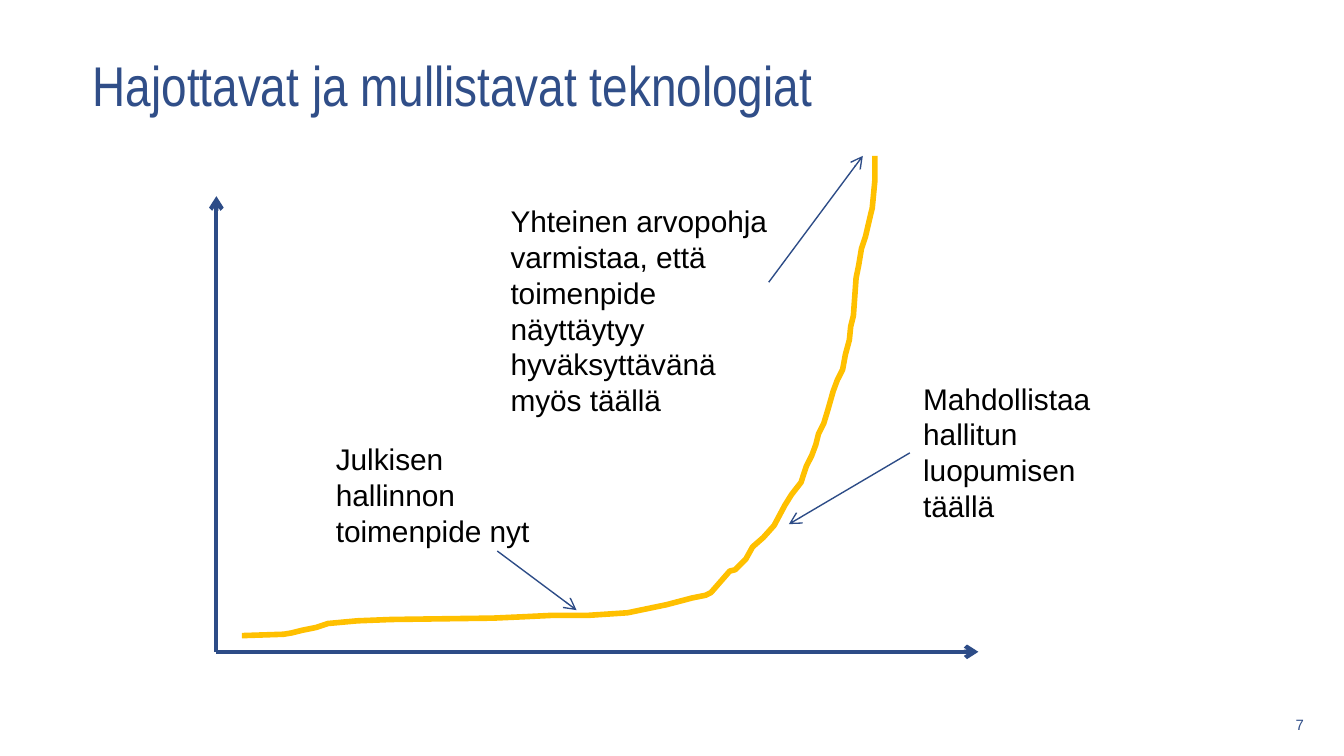
from pptx import Presentation
from pptx.dml.color import RGBColor
from pptx.enum.shapes import MSO_CONNECTOR
from pptx.enum.text import MSO_ANCHOR, PP_ALIGN
from pptx.oxml.ns import qn
from pptx.util import Pt
from lxml.etree import SubElement

PX = 9144  # EMU per px, 100 px to the inch
NAVY = RGBColor(0x2D, 0x4C, 0x87)
TITLE_BLUE = RGBColor(0x30, 0x4E, 0x88)
AMBER = RGBColor(0xFF, 0xC0, 0x00)
BLACK = RGBColor(0x00, 0x00, 0x00)

# Growth curve, relative to the graph box
GROWTH = [
    (19, 357), (50, 356), (56, 355), (64, 353), (74, 351), (83, 348),
    (105, 346), (130, 345), (206, 344), (228, 343), (249, 342), (276, 342),
    (306, 340), (335, 334), (354, 329), (364, 327), (368, 325), (375, 317),
    (382, 309), (386, 308), (394, 300), (399, 291), (407, 284), (415, 275),
    (423, 260), (428, 252), (435, 243), (439, 231), (443, 223), (446, 215),
    (448, 207), (452, 199), (455, 189), (459, 175), (462, 167), (466, 159),
    (468, 148), (471, 137), (472, 127), (474, 119), (476, 91), (478, 81),
    (480, 69), (483, 60), (487, 43), (488, 39), (490, 18), (490, 0),
]

# Text, its box, and its arrow's start and end, relative to the graph box
NOTES = [
    ("Julkisen hallinnon toimenpide nyt",
     (79, 207, 181, 91), (209, 294), (268, 338)),
    ("Mahdollistaa hallitun luopumisen täällä",
     (516, 162, 181, 118), (516, 221), (426, 274)),
    ("Yhteinen arvopohja varmistaa, että toimenpide näyttäytyy "
     "hyväksyttävänä myös täällä",
     (209, 30, 211, 172), (411, 94), (481, 0)),
]


def write_text(shape, text, size, color, font="Arial", align=PP_ALIGN.LEFT,
               anchor=MSO_ANCHOR.TOP):
    frame = shape.text_frame
    frame.word_wrap = True
    frame.vertical_anchor = anchor
    paragraph = frame.paragraphs[0]
    paragraph.alignment = align
    run = paragraph.add_run()
    run.text = text
    run.font.name = font
    run.font.size = Pt(size)
    run.font.color.rgb = color


def add_arrow(slide, start, end, width):
    arrow = slide.shapes.add_connector(
        MSO_CONNECTOR.STRAIGHT, *(v * PX for v in (*start, *end)))
    arrow.line.color.rgb = NAVY
    arrow.line.width = Pt(width)
    properties = arrow.element.spPr
    SubElement(properties.find(qn("a:ln")), qn("a:tailEnd"), type="arrow")
    SubElement(properties, qn("a:effectLst"))


def add_title(slide, box):
    title = slide.shapes.title
    title.left, title.top, title.width, title.height = (v * PX for v in box)
    write_text(title, "Hajottavat ja mullistavat teknologiat", 30, TITLE_BLUE,
               font="Arial Narrow", anchor=MSO_ANCHOR.MIDDLE)


def add_page_number(slide, box):
    number = slide.shapes.add_textbox(*(v * PX for v in box))
    write_text(number, "7", 8, TITLE_BLUE, align=PP_ALIGN.RIGHT,
               anchor=MSO_ANCHOR.MIDDLE)


def add_graph(slide, box):
    left, top, width, height = box

    def place(point):
        return left + point[0], top + point[1]

    # Axes
    origin = place((0, height))
    add_arrow(slide, origin, place((0, 30)), 2.25)
    add_arrow(slide, origin, place((width, height)), 2.25)

    # Growth curve
    first, *rest = map(place, GROWTH)
    builder = slide.shapes.build_freeform(*first, scale=PX)
    builder.add_line_segments(rest, close=False)
    curve = builder.convert_to_shape()
    curve.shadow.inherit = False
    curve.fill.background()
    curve.line.color.rgb = AMBER
    curve.line.width = Pt(3)

    # Notes with arrows to the curve
    for text, (x, y, w, h), start, end in NOTES:
        note = slide.shapes.add_textbox(
            *(v * PX for v in (*place((x, y)), w, h)))
        write_text(note, text, 16, BLACK)
        add_arrow(slide, place(start), place(end), 0.75)


def main():
    deck = Presentation()
    deck.slide_width = 1000 * PX
    deck.slide_height = deck.slide_width * 9 // 16
    slide = deck.slides.add_slide(deck.slide_layouts[5])
    add_title(slide, (59, 14, 807, 97))
    add_graph(slide, (161, 116, 567, 369))
    add_page_number(slide, (928, 527, 52, 24))
    deck.save("out.pptx")


if __name__ == "__main__":
    main()
